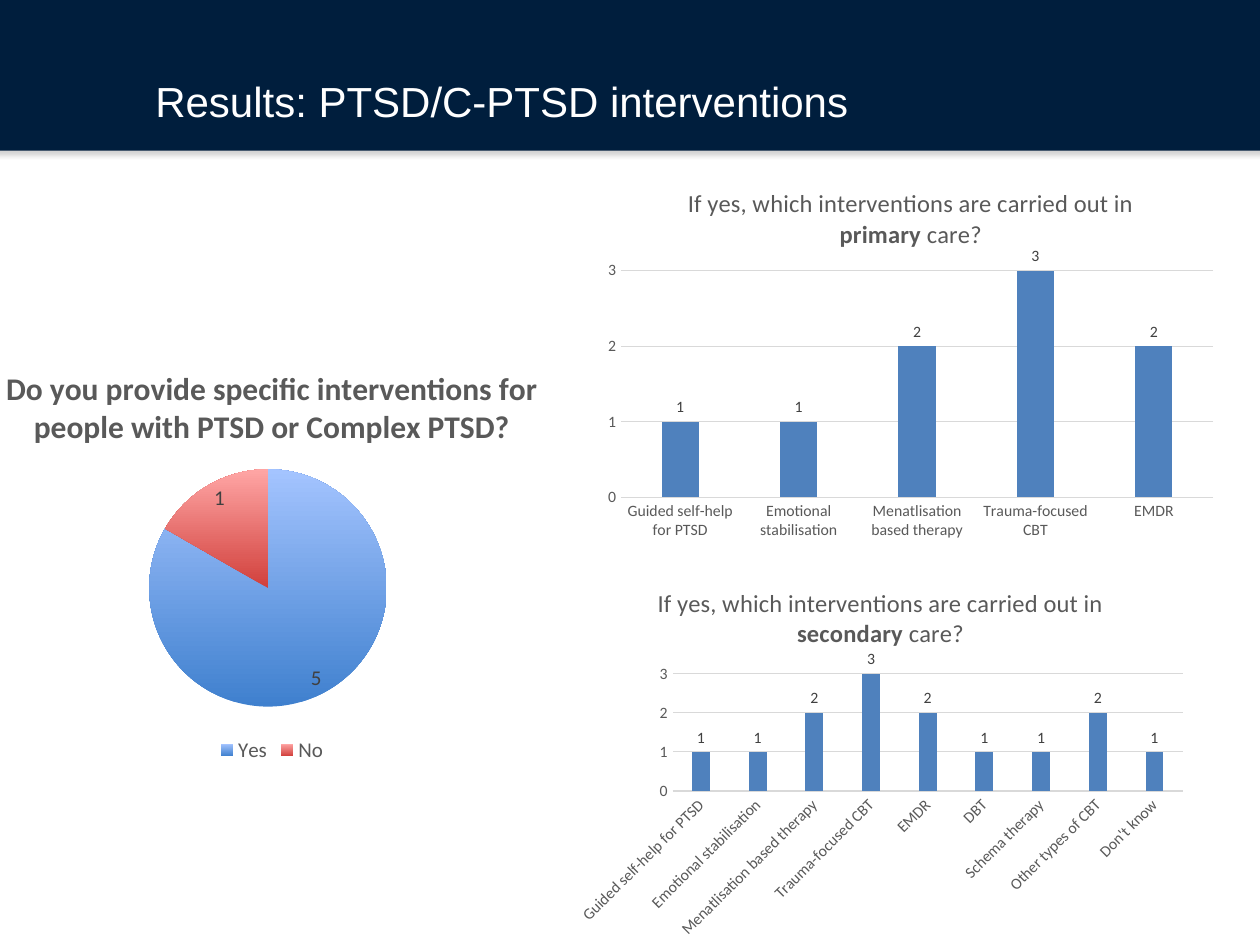
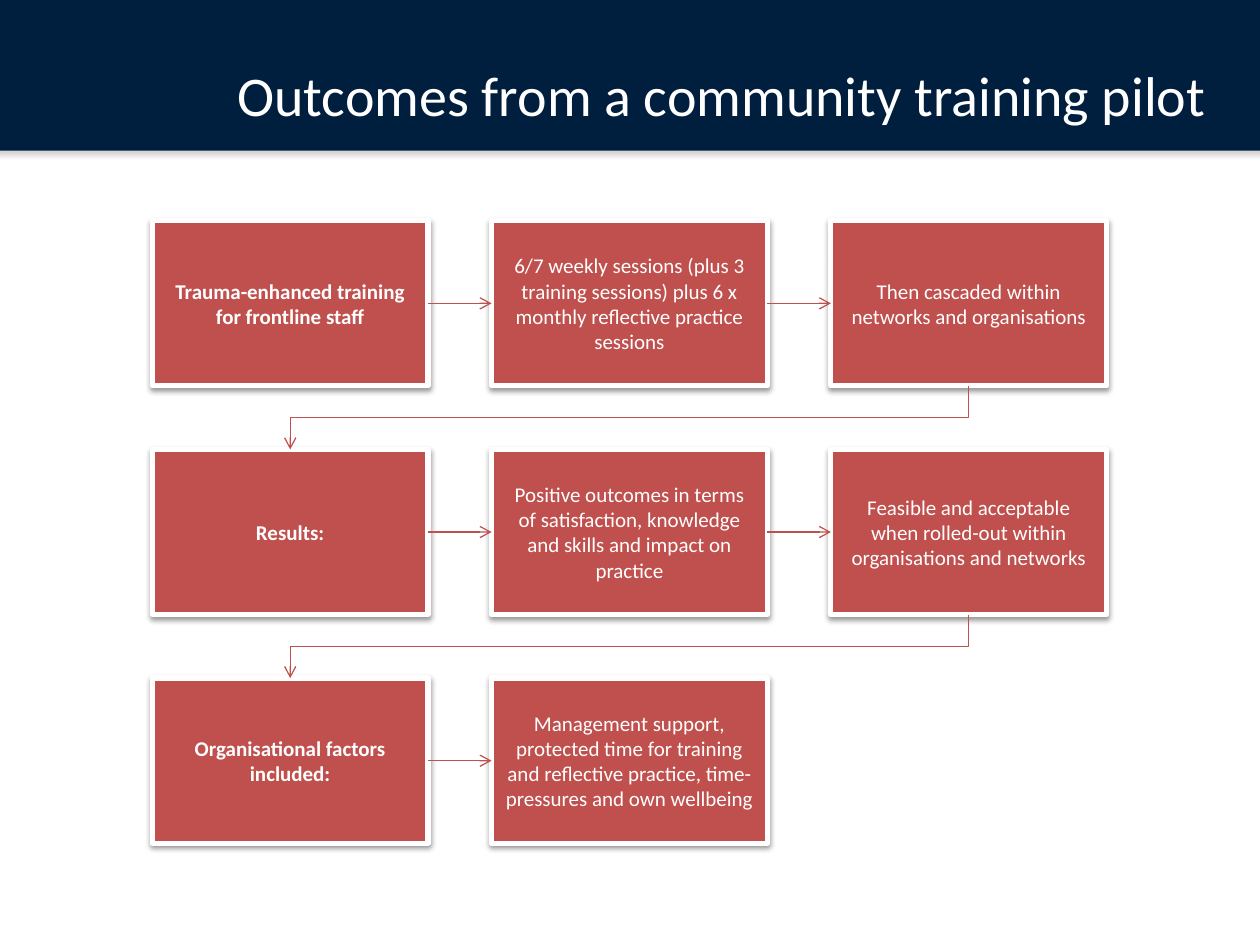
"""Build two slides: results on PTSD interventions and outcomes of a training pilot."""
import pptx
import pptx.chart.data
import pptx.dml.color
import pptx.enum.chart
import pptx.enum.shapes
import pptx.enum.text
import pptx.oxml
import pptx.oxml.ns
import pptx.util

Cm, Pt = pptx.util.Cm, pptx.util.Pt
ALIGN = pptx.enum.text.PP_ALIGN
ANCHOR = pptx.enum.text.MSO_ANCHOR
CONNECTOR = pptx.enum.shapes.MSO_CONNECTOR
CHART_TYPE = pptx.enum.chart.XL_CHART_TYPE
LABEL_POSITION = pptx.enum.chart.XL_LABEL_POSITION


def rgb(hex_colour):
    """Turn a hex string into a colour."""
    return pptx.dml.color.RGBColor.from_string(hex_colour)


def style_font(font, size, colour, name="Calibri", bold=False):
    """Set the typeface, size, colour and weight of a font."""
    font.name, font.size, font.bold = name, Pt(size), bold
    font.color.rgb = rgb(colour)


def write(paragraph, text, align=ALIGN.CENTER, **style):
    """Add a formatted run of text to a paragraph."""
    paragraph.alignment = align
    run = paragraph.add_run()
    run.text = text
    style_font(run.font, **style)


def element(xml):
    """Parse an XML fragment that uses the drawing and chart prefixes."""
    tag, rest = xml[1:].split(" ", 1)
    return pptx.oxml.parse_xml(f"<{tag} {pptx.oxml.ns.nsdecls('a', 'c')} {rest}")


class Deck:
    """Hold the shared style and the current slide."""

    NAVY, RED, BLUE, WHITE = "001E3D", "C0504D", "4F81BD", "FFFFFF"
    GREY, LABEL, GRID = "595959", "404040", "D9D9D9"

    def __init__(self):
        """Open a presentation and prepare the title-only layout."""
        self.presentation = pptx.Presentation()
        self.presentation.slide_width = Cm(25.4)
        self.presentation.slide_height = Cm(19.05)
        self.layout = self.presentation.slide_layouts[5]
        self.slide = None

    def new_slide(self):
        """Start a slide, with the band placed on the layout the first time."""
        first = self.slide is None
        self.slide = self.presentation.slides.add_slide(self.layout)
        if first:
            band = self.rectangle(-0.08, -0.03, 25.63, 3.07, self.NAVY)
            self.shadow(band, "808080", 35, 3.1, 1.8)
            self.layout.shapes.element.insert(2, band.element)

    def title(self, text, left, top, width, height, inset, align, **style):
        """Place and format the title placeholder."""
        title = self.slide.shapes.title
        title.left, title.top = Cm(left), Cm(top)
        title.width, title.height = Cm(width), Cm(height)
        frame = title.text_frame
        frame.word_wrap = True
        frame.auto_size = pptx.enum.text.MSO_AUTO_SIZE.NONE
        frame.vertical_anchor = ANCHOR.TOP
        frame.margin_left = frame.margin_right = Cm(0.18)
        frame.margin_top = frame.margin_bottom = Cm(inset)
        write(frame.paragraphs[0], text, align, colour=self.WHITE, **style)

    def rectangle(self, left, top, width, height, fill):
        """Add a filled rectangle without an outline."""
        shape = self.slide.shapes.add_shape(
            pptx.enum.shapes.MSO_SHAPE.RECTANGLE,
            Cm(left), Cm(top), Cm(width), Cm(height))
        shape.fill.solid()
        shape.fill.fore_color.rgb = rgb(fill)
        shape.line.fill.background()
        return shape

    def shadow(self, shape, colour, alpha, blur, distance):
        """Give a shape a soft shadow straight below it."""
        shape.shadow.inherit = False
        shape.element.spPr.find(pptx.oxml.ns.qn("a:effectLst")).append(element(
            f'<a:outerShdw blurRad="{Pt(blur)}" dist="{Pt(distance)}" dir="5400000" '
            f'rotWithShape="0"><a:srgbClr val="{colour}"><a:alpha val="{alpha * 1000}"/>'
            '</a:srgbClr></a:outerShdw>'))

    def step(self, text, left, top, width, height, bold):
        """Add a box of the process with its text."""
        box = self.rectangle(left, top, width, height, self.RED)
        box.line.color.rgb = rgb(self.WHITE)
        box.line.width = Pt(3)
        self.shadow(box, "000000", 38, 3.1, 1.6)
        frame = box.text_frame
        frame.word_wrap = True
        frame.vertical_anchor = ANCHOR.MIDDLE
        frame.margin_left = frame.margin_right = Cm(0.28)
        frame.margin_top = frame.margin_bottom = Cm(0.28)
        write(frame.paragraphs[0], text, size=12, colour=self.WHITE, bold=bold)
        return box

    def arrow(self, start, end):
        """Join two boxes, with an elbow when the next box is on a new row."""
        same_row = start.top == end.top
        kind = CONNECTOR.STRAIGHT if same_row else CONNECTOR.ELBOW
        arrow = self.slide.shapes.add_connector(kind, 0, 0, 0, 0)
        arrow.begin_connect(start, 3 if same_row else 2)
        arrow.end_connect(end, 1 if same_row else 0)
        if not same_row:
            across = start.left - end.left
            down = end.top - start.top - start.height
            centre_x = (start.left + end.left + start.width) // 2
            centre_y = start.top + start.height + down // 2
            flip = arrow.element.spPr.find(pptx.oxml.ns.qn("a:xfrm"))
            for side in ("flipH", "flipV"):
                flip.attrib.pop(side, None)
            arrow.left, arrow.top = centre_x - down // 2, centre_y - across // 2
            arrow.width, arrow.height = down, across
            arrow.rotation = 90
        arrow.line.color.rgb = rgb(self.RED)
        arrow.line.width = Pt(0.75)
        arrow.line._get_or_add_ln().append(element('<a:tailEnd type="arrow"/>'))
        arrow.element.spPr.append(element("<a:effectLst />"))

    def chart(self, kind, answers, place, plot_area, title_parts, title_size):
        """Add a chart with a title and a fixed plot area."""
        data = pptx.chart.data.CategoryChartData()
        data.categories = list(answers)
        data.add_series("Series 1", list(answers.values()))
        chart = self.slide.shapes.add_chart(kind, *map(Cm, place), data).chart
        style_font(chart.font, 10, "000000")
        heading = chart.chart_title.text_frame.paragraphs[0]
        for text, bold in title_parts:
            write(heading, text, size=title_size, colour=self.GREY, bold=bold)
        area = chart.element.chart.plotArea
        for old in area.findall(pptx.oxml.ns.qn("c:layout")):
            area.remove(old)
        sizes = "".join(f'<c:{key} val="{value}"/>' for key, value in zip("xywh", plot_area))
        area.insert(0, element(
            '<c:layout ><c:manualLayout><c:layoutTarget val="inner"/>'
            '<c:xMode val="edge"/><c:yMode val="edge"/>'
            f'{sizes}</c:manualLayout></c:layout>'))
        return chart

    def value_labels(self, plot, size, position):
        """Show the values of a plot."""
        plot.has_data_labels = True
        labels = plot.data_labels
        labels.show_value = True
        labels.position = position
        style_font(labels.font, size, self.LABEL)

    def pie(self, answers, gradients, place, plot_area, title):
        """Add a pie chart with one gradient for each slice."""
        chart = self.chart(CHART_TYPE.PIE, answers, place, plot_area, [(title, True)], 18)
        chart.has_legend = True
        chart.legend.position = pptx.enum.chart.XL_LEGEND_POSITION.BOTTOM
        chart.legend.include_in_layout = False
        style_font(chart.legend.font, 12, self.GREY)
        plot = chart.plots[0]
        self.value_labels(plot, 12, LABEL_POSITION.BEST_FIT)
        for index, colours in enumerate(gradients):
            fill = plot.series[0].points[index].format.fill
            fill.gradient()
            fill.gradient_angle = 90
            for stop, colour in zip(fill.gradient_stops, colours):
                stop.color.rgb = rgb(colour)

    def columns(self, answers, place, plot_area, care, label_angle):
        """Add a column chart about one level of care."""
        title = [("If yes, which interventions are carried out in ", False),
                 (care, True), (" care?", False)]
        chart = self.chart(CHART_TYPE.COLUMN_CLUSTERED, answers, place, plot_area, title, 14)
        chart.has_legend = False
        plot = chart.plots[0]
        plot.gap_width, plot.overlap, plot.vary_by_categories = 219, -27, False
        fill = plot.series[0].format.fill
        fill.solid()
        fill.fore_color.rgb = rgb(self.BLUE)
        self.value_labels(plot, 9, LABEL_POSITION.OUTSIDE_END)
        categories, values = chart.category_axis, chart.value_axis
        for axis in (categories, values):
            axis.major_tick_mark = axis.minor_tick_mark = pptx.enum.chart.XL_TICK_MARK.NONE
            style_font(axis.tick_labels.font, 9, self.GREY)
        values.minimum_scale, values.maximum_scale, values.major_unit = 0, 3, 1
        values.format.line.fill.background()
        for line in (categories.format.line, values.major_gridlines.format.line):
            line.color.rgb = rgb(self.GRID)
            line.width = Pt(0.75)
        body = categories._element.find(".//" + pptx.oxml.ns.qn("a:bodyPr"))
        body.set("rot", str(label_angle * 60000))


def build_results(deck):
    """Build the slide with the survey charts."""
    deck.new_slide()
    deck.title("Results: PTSD/C-PTSD interventions", 2.95, 1.42, 22.02, 1.22, 0.1,
               ALIGN.LEFT, size=24, name="Arial")
    deck.pie({"Yes": 5, "No": 1}, [("3F80CE", "A4C4FF"), ("D1403C", "FFA6A5")],
             (-2.24, 6.96, 15.44, 8.51), (0.34, 0.29, 0.31, 0.57),
             "Do you provide specific interventions for people with PTSD or Complex PTSD?")
    primary = {"Guided self-help for PTSD": 1, "Emotional stabilisation": 1,
               "Menatlisation based therapy": 2, "Trauma-focused CBT": 3, "EMDR": 2}
    secondary = {**primary, "DBT": 1, "Schema therapy": 1,
                 "Other types of CBT": 2, "Don't know": 1}
    deck.columns(primary, (12.01, 3.4, 12.7, 7.62), (0.04, 0.27, 0.94, 0.6), "primary", 0)
    deck.columns(secondary, (11.4, 11.45, 12.7, 7.62), (0.17, 0.28, 0.81, 0.31),
                 "secondary", -45)


def build_outcomes(deck):
    """Build the slide with the training process."""
    deck.new_slide()
    deck.title("Outcomes from a community training pilot", 3.76, 1.17, 21.59, 3.17, 0.04,
               ALIGN.CENTER, size=32)
    rows = [
        ["Trauma-enhanced training for frontline staff",
         "6/7 weekly sessions (plus 3 training sessions) plus 6 x monthly "
         "reflective practice sessions",
         "Then cascaded within networks and organisations"],
        ["Results:",
         "Positive outcomes in terms of satisfaction, knowledge and skills "
         "and impact on practice",
         "Feasible and acceptable when rolled-out within organisations and networks"],
        ["Organisational factors included:",
         "Management support, protected time for training and reflective practice, "
         "time-pressures and own wellbeing"],
    ]
    steps = [deck.step(text, 3.07 + 6.84 * column, 4.45 + 4.61 * row, 5.56, 3.33,
                       bold=column == 0)
             for row, texts in enumerate(rows) for column, text in enumerate(texts)]
    for start, end in zip(steps, steps[1:]):
        deck.arrow(start, end)


def main():
    """Build both slides and save them."""
    deck = Deck()
    build_results(deck)
    build_outcomes(deck)
    deck.presentation.save("out.pptx")


if __name__ == "__main__":
    main()
